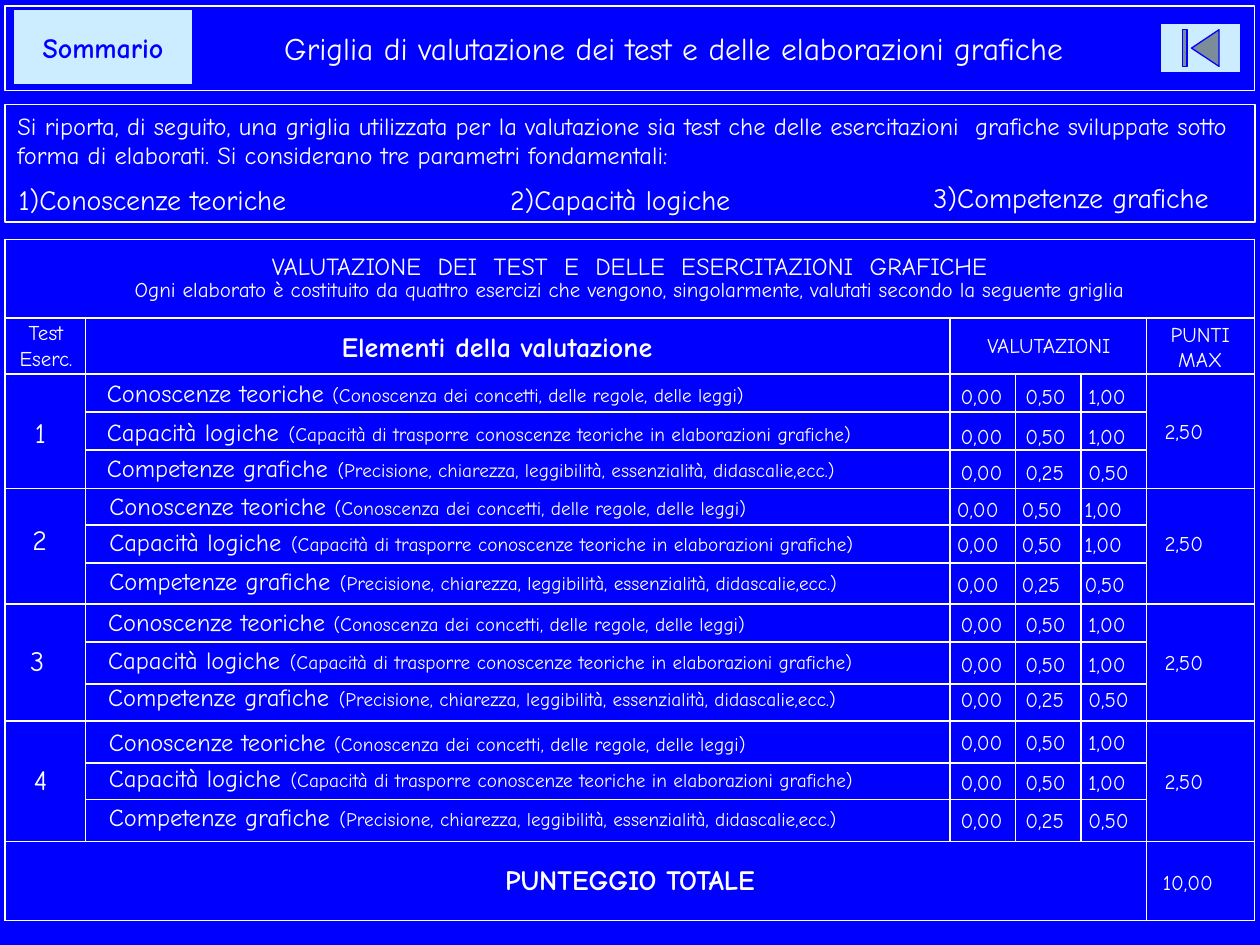
from dataclasses import dataclass

import pptx
import pptx.dml.color
import pptx.enum.shapes
import pptx.enum.text
import pptx.oxml
import pptx.oxml.ns
import pptx.util

Pt = pptx.util.Pt
RGB = pptx.dml.color.RGBColor.from_string
SHAPES = pptx.enum.shapes.MSO_SHAPE
ALIGN = pptx.enum.text.PP_ALIGN
ANCHOR = pptx.enum.text.MSO_ANCHOR
AUTO = pptx.enum.text.MSO_AUTO_SIZE


@dataclass(frozen=True)
class Theme:
    font: str = "Comic Neue"
    blue: str = "0000FF"
    white: str = "FFFFFF"
    pale: str = "CCECFF"
    title: int = 18
    head: int = 16
    body: int = 14
    value: int = 12
    detail: int = 11
    empty: int = 6


T = Theme()

CRITERIA = [
    [("Conoscenze teoriche ", T.body),
     ("(Conoscenza dei concetti, delle regole, delle leggi)", T.detail)],
    [("Capacità logiche", T.body), (" ", T.head),
     ("(Capacità di trasporre conoscenze teoriche in elaborazioni grafiche)", T.detail)],
    [("Competenze grafiche", T.body), (" ", T.head),
     ("(Precisione, chiarezza, leggibilità, essenzialità, didascalie,ecc.)", T.detail)],
]
SCORES = [("0,00", "0,50", "1,00"), ("0,00", "0,50", "1,00"), ("0,00", "0,25", "0,50")]
SCORE_LEFTS = (539, 576, 612)

# For each exercise, measured from the table's corner: number (left, top),
# label left and tops, shift of the scores and their tops, top of the maximum.
EXERCISES = [
    ((10, 97.2), 51.1, (75.6, 95.8, 116.6), 0, (78.8, 101.7, 122), 98.6),
    ((8.5, 158.4), 52.5, (140.4, 159.1, 181.4), -2.2, (143.3, 163.4, 186.5), 162.7),
    ((7.2, 227.5), 51.8, (206.6, 226.1, 247.7), 0, (208.9, 232, 252), 231.1),
    ((9.4, 295.2), 52.2, (275, 293.8, 316.1), 0, (276.3, 299.4, 321.4), 298.8),
]

COLS = (46, 494, 37.5, 37.5, 37.5, 61.7)
ROWS = (44.9, 32, 21.7, 21.7, 22, 21.1, 21.7, 23.4, 21.7, 24, 21.1, 24, 21.1, 24, 45.1)
MERGES = [((0, 0), (0, 5)), ((1, 2), (1, 4)), ((14, 0), (14, 4))] + [
    ((row, col), (row + 2, col)) for row in range(2, 14, 3) for col in (0, 5)]


def add_runs(p, runs, color=T.white, bold=False):
    for text, size in runs:
        r = p.add_run()
        r.text = text
        style = {"name": T.font, "size": Pt(size), "bold": bold}
        for name, value in style.items():
            setattr(r.font, name, value)
        r.font.color.rgb = RGB(color)


def add_text(s, box, runs, align=ALIGN.LEFT, bold=False):
    tf = s.shapes.add_textbox(*map(Pt, box)).text_frame
    tf.word_wrap = True
    tf.auto_size = AUTO.SHAPE_TO_FIT_TEXT
    tf.paragraphs[0].alignment = align
    add_runs(tf.paragraphs[0], runs, bold=bold)


def add_box(s, kind, box, line, width, fill=None):
    sp = s.shapes.add_shape(kind, *map(Pt, box))
    sp.shadow.inherit = False
    if fill:
        sp.fill.solid()
        sp.fill.fore_color.rgb = RGB(fill)
    else:
        sp.fill.background()
    sp.line.color.rgb = RGB(line)
    sp.line.width = Pt(width)
    sp.text_frame.word_wrap = True
    return sp


def header(s, box):
    left, top, width, height = box
    button = add_box(s, SHAPES.ACTION_BUTTON_CUSTOM, (left + 5, top + 2.2, 102, 42.5),
                     T.blue, 0, T.pale)
    title = add_box(s, SHAPES.RECTANGLE, box, T.white, 0.75)
    title.text_frame.margin_left = Pt(57)
    add_box(s, SHAPES.ACTION_BUTTON_BEGINNING, (left + 660.2, top + 10.1, 46, 28),
            T.blue, 0, T.pale)
    for sp, text, size, color, bold in (
            (button, "Sommario", T.head, T.blue, True),
            (title, "Griglia di valutazione dei test e delle elaborazioni grafiche",
             T.title, T.white, False)):
        tf = sp.text_frame
        tf.vertical_anchor = ANCHOR.MIDDLE
        tf.paragraphs[0].alignment = ALIGN.CENTER
        add_runs(tf.paragraphs[0], [(text, size)], color, bold)


def introduction(s, box):
    left, top = box[:2]
    tf = add_box(s, SHAPES.RECTANGLE, box, T.white, 1).text_frame
    tf.vertical_anchor = ANCHOR.TOP
    tf.paragraphs[0].alignment = ALIGN.LEFT
    add_runs(tf.paragraphs[0], [(
        "Si riporta, di seguito, una griglia utilizzata per la valutazione sia test che "
        "delle esercitazioni  grafiche sviluppate sotto forma di elaborati. "
        "Si considerano tre parametri fondamentali:", T.body)])
    for dx, dy, width, text in ((0.7, 41, 187, "1)Conoscenze teoriche"),
                                (281.5, 41, 151, "2)Capacità logiche"),
                                (523.4, 39.6, 191, "3)Competenze grafiche")):
        add_text(s, (left + dx, top + dy, width, 26.6), [(text, T.head)])


def format_cell(cell):
    for side in ("left", "right", "top", "bottom"):
        setattr(cell, f"margin_{side}", 0)
    cell.vertical_anchor = ANCHOR.MIDDLE
    tc_pr = cell._tc.get_or_add_tcPr()
    ns = pptx.oxml.ns.nsdecls("a")
    for side in "LRTB":
        tc_pr.append(pptx.oxml.parse_xml(
            f'<a:ln{side} {ns} w="{Pt(1)}"><a:solidFill><a:srgbClr val="{T.white}"/>'
            f'</a:solidFill></a:ln{side}>'))
    cell.fill.background()
    cell.text_frame.paragraphs[0]._p.append(
        pptx.oxml.parse_xml(f'<a:endParaRPr {ns} sz="{T.empty * 100}"/>'))


def grid(s, box):
    table = s.shapes.add_table(len(ROWS), len(COLS), *map(Pt, box)).table
    table.first_row = table.horz_banding = False
    for column, width in zip(table.columns, COLS):
        column.width = Pt(width)
    for row, height in zip(table.rows, ROWS):
        row.height = Pt(height)
    for cell in table.iter_cells():
        format_cell(cell)
    for first, last in MERGES:
        table.cell(*first).merge(table.cell(*last))
    tf = table.cell(0, 0).text_frame
    lines = (("VALUTAZIONE  DEI  TEST  E  DELLE  ESERCITAZIONI  GRAFICHE", T.body),
             ("Ogni elaborato è costituito da quattro esercizi che vengono, singolarmente, "
              "valutati secondo la seguente griglia", T.value))
    for p, run in zip((tf.paragraphs[0], tf.add_paragraph()), lines):
        p.alignment = ALIGN.CENTER
        p.line_spacing = 0.9
        add_runs(p, [run])


def grid_headings(s, box):
    left, top = box[:2]
    for dx, dy, width, height, text, size, bold in (
            (-2.9, 42.5, 52.6, 36, "Test Eserc.", T.value, False),
            (170.6, 48.2, 221, 26.6, "Elementi della valutazione", T.head, True),
            (540, 49.7, 113, 21.6, "VALUTAZIONI", T.value, False),
            (653, 43.2, 60, 36, "PUNTI MAX", T.value, False),
            (243.4, 352.8, 227.5, 26.6, "PUNTEGGIO TOTALE", T.head, True)):
        add_text(s, (left + dx, top + dy, width, height), [(text, size)],
                 ALIGN.CENTER, bold)
    add_text(s, (left + 654.5, top + 356.4, 47.5, 21.6), [("10,00", T.value)])


def exercise(s, box, number, layout):
    """Place one exercise's number, criteria, scores and maximum."""
    left, top = box[:2]
    (dx, dy), label_left, label_tops, shift, score_tops, max_top = layout
    add_text(s, (left + dx, top + dy, 24, 26.6), [(str(number), T.head)])
    for runs, label_top, scores, score_top in zip(CRITERIA, label_tops, SCORES, score_tops):
        add_text(s, (left + label_left, top + label_top, 484, 26.6), runs)
        for score, score_left in zip(scores, SCORE_LEFTS):
            add_text(s, (left + score_left + shift, top + score_top, 44, 21.6),
                     [(score, T.value)])
    add_text(s, (left + 655.5, top + max_top, 47.5, 21.6), [("2,50", T.value)])


def main():
    prs = pptx.Presentation()
    prs.slide_width, prs.slide_height = Pt(720), Pt(540)
    s = prs.slides.add_slide(prs.slide_layouts[6])
    s.background.fill.solid()
    s.background.fill.fore_color.rgb = RGB(T.blue)

    header(s, (2.9, 3.4, 714.2, 48.2))
    table_box = (2.9, 136.8, 714.2, 389.5)
    grid(s, table_box)
    introduction(s, (2.9, 59.8, 714.2, 67))
    grid_headings(s, table_box)
    for number, layout in enumerate(EXERCISES, 1):
        exercise(s, table_box, number, layout)
    prs.save("out.pptx")


if __name__ == "__main__":
    main()
